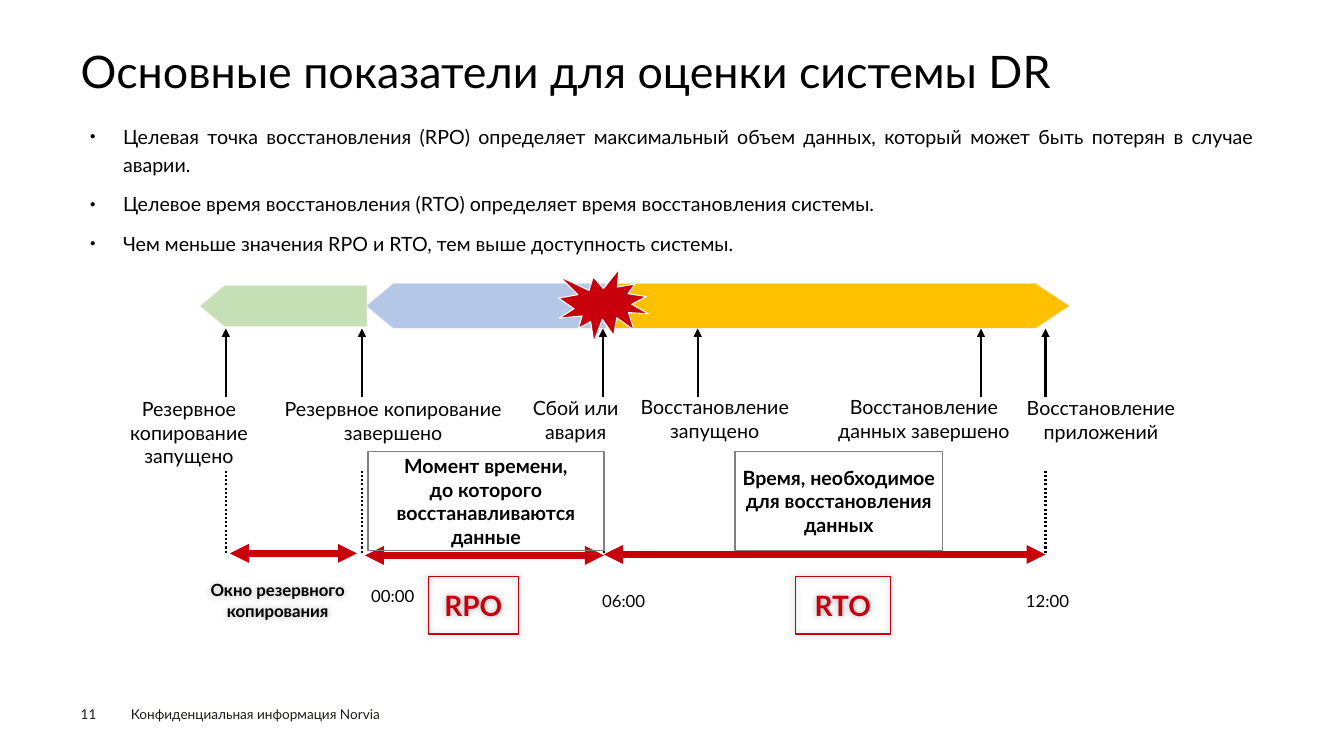
from lxml import etree
from pptx import Presentation
from pptx.dml.color import RGBColor
from pptx.enum.dml import MSO_LINE
from pptx.enum.shapes import MSO_CONNECTOR, MSO_SHAPE
from pptx.enum.text import MSO_ANCHOR, MSO_AUTO_SIZE, PP_ALIGN
from pptx.oxml.ns import qn
from pptx.util import Inches, Pt

BLACK = RGBColor(0x00, 0x00, 0x00)
WHITE = RGBColor(0xFF, 0xFF, 0xFF)
INK = RGBColor(0x1D, 0x1D, 0x1B)
RED = RGBColor(0xC7, 0x00, 0x0B)
GRAY = RGBColor(0x80, 0x80, 0x80)
PALE = RGBColor(0xF2, 0xF2, 0xF2)
GREEN = RGBColor(0xC5, 0xE0, 0xB4)
BLUE = RGBColor(0xB4, 0xC7, 0xE7)
AMBER = RGBColor(0xFF, 0xC0, 0x00)
FONT = "Lato"

TITLE = "Основные показатели для оценки системы DR"
BULLETS = [
    "Целевая точка восстановления (RPO) определяет максимальный объем данных, "
    "который может быть потерян в случае аварии.",
    "Целевое время восстановления (RTO) определяет время восстановления системы.",
    "Чем меньше значения RPO и RTO, тем выше доступность системы.",
]
# Places are (left, top, width, height) in inches
AMBER_STAGE = ((6.02, 2.81, 4.59, 0.45), AMBER, 0.75, 0)
BLUE_STAGE = ((3.63, 2.81, 2.38, 0.45), BLUE, 0.6, 180)
GREEN_STAGE = ((1.98, 2.83, 1.66, 0.41), GREEN, 0.6, 180)
BURST = (5.54, 2.67, 0.89, 0.72)
EVENT_XS = [2.24, 3.59, 5.98, 6.92, 9.73, 10.37]
DOTTED_XS = [2.24, 3.59, 5.99, 10.37]
SPANS = [(2.28, 3.54, 5.49), (3.62, 5.99, 5.51), (5.99, 10.37, 5.5)]
EVENT_LABELS = [
    ("Резервное копирование\nзапущено", (1.11, 3.94, 1.53, 0.7)),
    ("Резервное копирование\nзавершено", (2.66, 3.94, 2.48, 0.47)),
    ("Сбой или авария", (5.14, 3.93, 1.14, 0.47)),
    ("Восстановление запущено", (6.26, 3.92, 1.66, 0.47)),
    ("Восстановление\nданных завершено", (8.13, 3.92, 2.07, 0.47)),
    ("Восстановление приложений", (10.07, 3.93, 1.7, 0.47)),
]
TIMES = [
    ("00:00", (3.4, 5.76, 0.99, 0.3)),
    ("06:00", (5.69, 5.81, 0.99, 0.3)),
    ("12:00", (9.91, 5.81, 0.96, 0.3)),
]
# text, place, border, size, text colour, shadow
BOXES = [
    ("RPO", (4.25, 5.72, 0.89, 0.57), RED, 20, RED, True),
    ("RTO", (7.89, 5.72, 0.94, 0.57), RED, 20, RED, True),
    ("Окно резервного копирования", (2, 5.67, 1.51, 0.57), None, 12, BLACK, True),
    ("Момент времени,\nдо которого восстанавливаются данные",
     (3.65, 4.48, 2.34, 0.98), GRAY, 14, BLACK, False),
    ("Время, необходимое для восстановления данных",
     (7.29, 4.48, 2.06, 0.98), GRAY, 14, BLACK, False),
]
FOOTERS = [
    ("Конфиденциальная информация Norvia", (1.2, 6.95, 3.03, 0.26), (0.1, 0.05)),
    ("11", (0.8, 7, 0.55, 0.16), (0, 0)),
]


def inches(place):
    return [Inches(value) for value in place]


def move(shape, place):
    shape.left, shape.top, shape.width, shape.height = inches(place)


def write(shape, lines, size, color=BLACK, bold=False, align=PP_ALIGN.CENTER,
          insets=(0, 0), anchor=MSO_ANCHOR.TOP):
    """Fill a shape with one paragraph per line and return the paragraphs."""
    frame = shape.text_frame
    frame.word_wrap = True
    frame.auto_size = MSO_AUTO_SIZE.NONE
    frame.vertical_anchor = anchor
    frame.margin_left = frame.margin_right = Inches(insets[0])
    frame.margin_top = frame.margin_bottom = Inches(insets[1])
    frame.text = "\n".join(lines)
    for para in frame.paragraphs:
        para.alignment = align
        font = para.font
        font.name, font.size, font.bold = FONT, Pt(size), bold
        font.color.rgb = color
    return frame.paragraphs


def add_label(page, text, place, size, **style):
    write(page.shapes.add_textbox(*inches(place)), text.split("\n"), size, **style)


def add_preset(page, kind, place, fill, border, width):
    shape = page.shapes.add_shape(kind, *inches(place))
    shape.shadow.inherit = False
    if fill is None:
        shape.fill.background()
    else:
        shape.fill.solid()
        shape.fill.fore_color.rgb = fill
    if border is None:
        shape.line.fill.background()
    else:
        shape.line.color.rgb = border
        shape.line.width = Pt(width)
    return shape


def add_stage(page, place, fill, point, rotation):
    stage = add_preset(page, MSO_SHAPE.PENTAGON, place, fill, PALE, 0.5)
    stage.adjustments[0] = point
    stage.rotation = rotation


def add_line(page, start, end, color, width, ends=(), dash=None):
    """Draw a line; ends names the arrowheads, headEnd before tailEnd."""
    line = page.shapes.add_connector(MSO_CONNECTOR.STRAIGHT, *inches(start + end))
    line.line.color.rgb = color
    line.line.width = Pt(width)
    if dash:
        line.line.dash_style = dash
    for end_name in ends:
        etree.SubElement(line.line._get_or_add_ln(), qn("a:" + end_name), type="triangle")
    etree.SubElement(line._element.spPr, qn("a:effectLst"))


def add_glow_shadow(shape):
    effects = shape._element.spPr.find(qn("a:effectLst"))
    shadow = etree.SubElement(effects, qn("a:outerShdw"), blurRad=str(Pt(5)),
                              dist="0", dir="0", algn="ctr", rotWithShape="0")
    color = etree.SubElement(shadow, qn("a:srgbClr"), val=str(BLACK))
    etree.SubElement(color, qn("a:alpha"), val="30000")


def add_bullet(para):
    props = para._p.get_or_add_pPr()
    props.set("marL", str(Inches(0.33)))
    props.set("indent", str(-Inches(0.33)))
    bullet = [etree.Element(qn("a:buSzPct"), val="50000"),
              etree.Element(qn("a:buChar"), char="●")]
    font = props.find(qn("a:defRPr"))
    for part in bullet:
        font.addprevious(part)


def fill_placeholders(page):
    title, body = page.shapes.title, page.placeholders[1]
    move(title, (0.8, 0.49, 11.73, 0.54))
    write(title, [TITLE], 32, align=PP_ALIGN.LEFT)[0].line_spacing = 0.9
    move(body, (0.8, 1.15, 11.73, 5.33))
    paras = write(body, BULLETS, 14, align=PP_ALIGN.JUSTIFY, insets=(0.09, 0.04))
    for number, para in enumerate(paras):
        add_bullet(para)
        para.line_spacing = 1.2
        para.space_before = Pt(7.9 if number else 0)


def draw_timeline(page):
    for stage in (AMBER_STAGE, BLUE_STAGE, GREEN_STAGE):
        add_stage(page, *stage)
    for x in EVENT_XS:
        add_line(page, (x, 3.94), (x, 3.26), BLACK, 1.5, ["tailEnd"])
    for left, right, y in SPANS:
        add_line(page, (left, y), (right, y), RED, 4.5, ["headEnd", "tailEnd"])
    add_preset(page, MSO_SHAPE.EXPLOSION1, BURST, RED, WHITE, 0.75)
    for x in DOTTED_XS:
        add_line(page, (x, 4.67), (x, 5.5), BLACK, 1.5, dash=MSO_LINE.ROUND_DOT)
    for text, place in EVENT_LABELS:
        add_label(page, text, place, 14)
    for text, place in TIMES:
        add_label(page, text, place, 12, insets=(0.1, 0.05))
    for text, place, border, size, color, shadowed in BOXES:
        box = add_preset(page, MSO_SHAPE.RECTANGLE, place, None, border, 1)
        write(box, text.split("\n"), size, color, bold=True,
              insets=(0.07, 0.04), anchor=MSO_ANCHOR.MIDDLE)
        if shadowed:
            add_glow_shadow(box)


def main():
    deck = Presentation()
    deck.slide_width, deck.slide_height = Inches(13.33), Inches(7.5)
    page = deck.slides.add_slide(deck.slide_layouts[1])
    fill_placeholders(page)
    draw_timeline(page)
    for text, place, insets in FOOTERS:
        add_label(page, text, place, 9.7, color=INK, align=PP_ALIGN.LEFT, insets=insets)
    deck.save("out.pptx")


if __name__ == "__main__":
    main()
